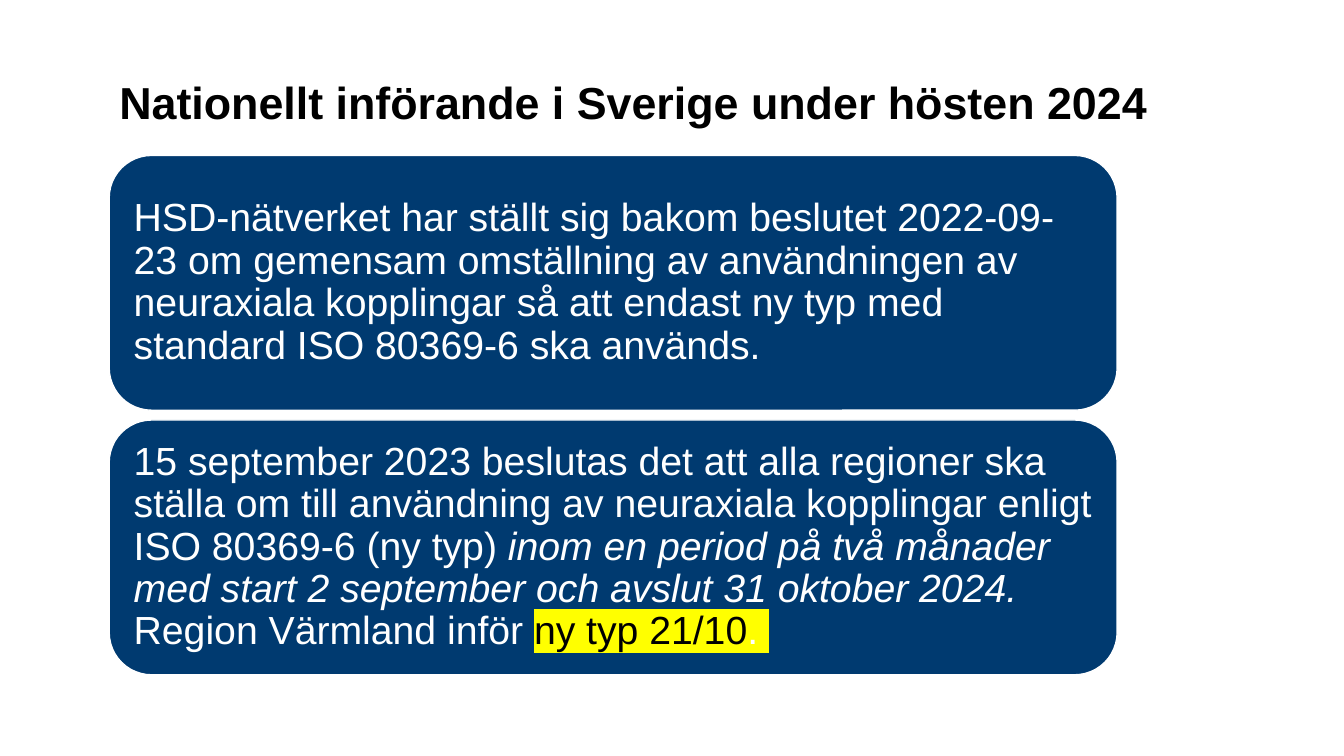
import pptx
import pptx.util
import pptx.dml.color
import pptx.enum.shapes
import pptx.enum.text
import pptx.oxml
import pptx.oxml.ns

Pt = pptx.util.Pt
COLORS = {"navy": "003A70", "white": "FFFFFF", "black": "000000", "yellow": "FFFF00"}
LEFT = 78
PANEL_TOP, PANEL_W, PANEL_H, PANEL_STEP = 111, 720, 182, 189

DECISIONS = [
    [("HSD-nätverket har ställt sig bakom beslutet 2022-09-23 om gemensam "
      "omställning av användningen av neuraxiala kopplingar så att endast ny typ "
      "med standard ISO 80369-6 ska används.", {})],
    [("15 september 2023 beslutas det att alla regioner ska ställa om till "
      "användning av neuraxiala kopplingar enligt ISO 80369-6 (ny typ) ", {}),
     ("inom en period på två månader med start 2 september och avslut "
      "31 oktober 2024. ", {"italic": True}),
     ("Region Värmland inför ", {}),
     ("ny typ 21/10", {"color": "black", "highlight": "yellow"}),
     (". ", {"highlight": "yellow"})],
]


def rgb(name):
    return pptx.dml.color.RGBColor.from_string(COLORS[name])


def add_text(p, text, size=28, color="white", bold=False, italic=False, highlight=None):
    r = p.add_run()
    r.text = text
    r.font.size = Pt(size)
    r.font.bold = bold
    r.font.italic = italic
    r.font.color.rgb = rgb(color)
    if highlight:
        mark = pptx.oxml.parse_xml(
            f'<a:highlight {pptx.oxml.ns.nsdecls("a")}>'
            f'<a:srgbClr val="{COLORS[highlight]}"/></a:highlight>')
        r.font.fill._xPr.find(pptx.oxml.ns.qn("a:solidFill")).addnext(mark)
    r.font.name = "Arial"


def format_frame(tf, anchor):
    """Set wrapping and anchor, and return the left-aligned first paragraph."""
    tf.word_wrap = True
    tf.auto_size = pptx.enum.text.MSO_AUTO_SIZE.NONE
    tf.vertical_anchor = anchor
    p = tf.paragraphs[0]
    p.alignment = pptx.enum.text.PP_ALIGN.LEFT
    p.line_spacing = 0.9
    p.space_before = Pt(0)
    return p


def set_title(s, text):
    sp = s.shapes.title
    sp.left, sp.top, sp.width, sp.height = Pt(LEFT), Pt(48), Pt(756), Pt(48)
    p = format_frame(sp.text_frame, pptx.enum.text.MSO_ANCHOR.BOTTOM)
    add_text(p, text, size=32, color="black", bold=True)


def add_panel(s, top, runs):
    sp = s.shapes.add_shape(pptx.enum.shapes.MSO_SHAPE.ROUNDED_RECTANGLE,
                            Pt(LEFT), Pt(top), Pt(PANEL_W), Pt(PANEL_H))
    sp.shadow.inherit = False
    sp.fill.solid()
    sp.fill.fore_color.rgb = rgb("navy")
    sp.line.color.rgb = rgb("white")
    sp.line.width = Pt(1)
    tf = sp.text_frame
    tf.margin_left = tf.margin_right = tf.margin_top = tf.margin_bottom = Pt(8.64)
    p = format_frame(tf, pptx.enum.text.MSO_ANCHOR.MIDDLE)
    for text, style in runs:
        add_text(p, text, **style)


def main():
    prs = pptx.Presentation()
    prs.slide_width, prs.slide_height = Pt(960), Pt(540)
    s = prs.slides.add_slide(prs.slide_layouts[5])
    set_title(s, "Nationellt införande i Sverige under hösten 2024")
    for i, runs in enumerate(DECISIONS):
        add_panel(s, PANEL_TOP + i * PANEL_STEP, runs)
    prs.save("out.pptx")


if __name__ == "__main__":
    main()
